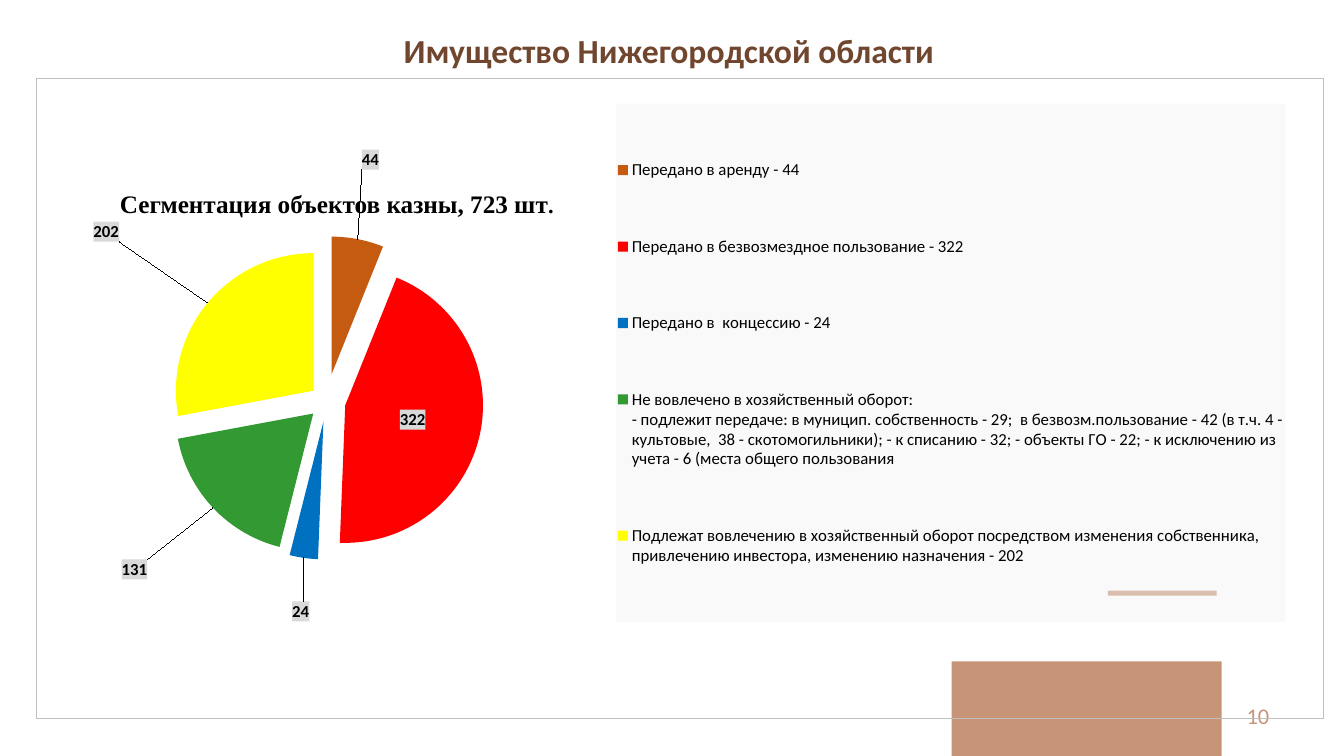
from dataclasses import dataclass
from typing import Optional

from lxml.etree import SubElement
from pptx import Presentation
from pptx.chart.chart import Chart
from pptx.chart.data import CategoryChartData
from pptx.dml.color import RGBColor as Rgb
from pptx.enum.chart import XL_CHART_TYPE as ChartType
from pptx.enum.chart import XL_LABEL_POSITION as LabelPos
from pptx.enum.chart import XL_LEGEND_POSITION as LegendPos
from pptx.enum.shapes import MSO_SHAPE as Preset
from pptx.enum.text import MSO_ANCHOR as Anchor
from pptx.enum.text import PP_ALIGN as Align
from pptx.oxml import parse_xml
from pptx.oxml.ns import nsdecls, qn
from pptx.slide import Slide
from pptx.util import Inches, Pt

SLIDE_WIDTH, SLIDE_HEIGHT = Inches(13.33), Inches(7.5)


@dataclass(frozen=True)
class Theme:
    accent: str = "C79478"
    title: str = "71462F"
    ink: str = "000000"
    frame: str = "BFBFBF"
    legend: str = "F2F2F2"
    label: str = "D9D9D9"
    body_font: str = "Calibri"
    caption_font: str = "Times New Roman"
    title_size: float = 24
    caption_size: float = 18
    number_size: float = 16
    chart_size: float = 12


THEME = Theme()


@dataclass(frozen=True)
class Box:
    """Place on the slide, in percent of its width and height."""
    left: float
    top: float
    width: float
    height: float

    def emu(self) -> tuple[int, int, int, int]:
        return (int(SLIDE_WIDTH * self.left / 100), int(SLIDE_HEIGHT * self.top / 100),
                int(SLIDE_WIDTH * self.width / 100), int(SLIDE_HEIGHT * self.height / 100))


@dataclass(frozen=True)
class Caption:
    box: Box
    runs: tuple[tuple[str, float], ...]
    font: str
    color: str
    bold: bool = True
    align: Align = Align.LEFT
    anchor: Anchor = Anchor.TOP
    line_spacing: float = 1.0


@dataclass(frozen=True)
class Segment:
    """Pie slice; label_shift is its label's offset in shares of the chart."""
    name: str
    count: int
    color: str
    explosion: int
    label_shift: Optional[tuple[float, float]] = None


ACCENT_BLOCKS = (Box(70.8, 87.47, 20.1, 12.53), Box(82.43, 78.13, 8.1, 0.67))
CHART_BOX = Box(2.7, 10.27, 95.85, 84.8)
PAGE_NUMBER = Caption(Box(72.68, 92, 22.5, 5.33), (("10", THEME.number_size),),
                      THEME.body_font, THEME.accent, False, Align.RIGHT, Anchor.MIDDLE)
CHART_CAPTION = Caption(Box(8.18, 24.27, 36, 5.33),
                        (("Сегментация объектов казны, 723 шт", THEME.caption_size),
                         (".", THEME.number_size)),
                        THEME.caption_font, THEME.ink)
HEADING = Caption(Box(3.52, 2.53, 92.48, 8.93),
                  (("Имущество Нижегородской области", THEME.title_size),),
                  THEME.body_font, THEME.title, True, Align.CENTER, Anchor.MIDDLE, 0.9)
SEGMENTS = (
    Segment("Передано в аренду - 44", 44, "C55A11", 20, (0.02, -0.23)),
    Segment("Передано в безвозмездное пользование - 322", 322, "FF0000", 14),
    Segment("Передано в  концессию - 24", 24, "0070C0", 15, (-0.01, 0.19)),
    Segment("Не вовлечено в хозяйственный оборот:\n"
            "- подлежит передаче: в муницип. собственность - 29;  в безвозм.пользование - 42 "
            "(в т.ч. 4 - культовые,  38 - скотомогильники); - к списанию - 32; "
            "- объекты ГО - 22; - к исключению из учета - 6 (места общего пользования",
            131, "339933", 13, (-0.1, 0.17)),
    Segment("Подлежат вовлечению в хозяйственный оборот посредством изменения собственника, "
            "привлечению инвестора, изменению назначения - 202",
            202, "FFFF00", 12, (-0.12, -0.18)),
)


def add_block(slide: Slide, box: Box) -> None:
    block = slide.shapes.add_shape(Preset.RECTANGLE, *box.emu())
    block.shadow.inherit = False
    block.fill.solid()
    block.fill.fore_color.rgb = Rgb.from_string(THEME.accent)
    block.line.fill.background()


def add_caption(slide: Slide, caption: Caption) -> None:
    frame = slide.shapes.add_textbox(*caption.box.emu()).text_frame
    frame.word_wrap = True
    frame.vertical_anchor = caption.anchor
    line = frame.paragraphs[0]
    line.alignment, line.line_spacing = caption.align, caption.line_spacing
    for text, size in caption.runs:
        run = line.add_run()
        run.text = text
        style = {"name": caption.font, "size": Pt(size), "bold": caption.bold}
        for key, value in style.items():
            setattr(run.font, key, value)
        run.font.color.rgb = Rgb.from_string(caption.color)


def layout_xml(**settings: object):
    """Manual chart layout holding the given settings in order."""
    layout = parse_xml(f"<c:layout {nsdecls('c')}><c:manualLayout/></c:layout>")
    for key, value in settings.items():
        SubElement(layout[0], qn(f"c:{key}")).set("val", str(value))
    return layout


def fill_xml(color: str, alpha: int = 100):
    return parse_xml(f'<c:spPr {nsdecls("c", "a")}><a:solidFill><a:srgbClr val="{color}">'
                     f'<a:alpha val="{alpha * 1000}"/></a:srgbClr></a:solidFill></c:spPr>')


def place_chart_parts(chart: Chart) -> None:
    """Set the frame line and the places of pie and legend."""
    root = chart.element.find(qn("c:chart"))
    root.addnext(parse_xml(
        f'<c:spPr {nsdecls("c", "a")}><a:noFill/><a:ln w="{Pt(0.75)}"><a:solidFill>'
        f'<a:srgbClr val="{THEME.frame}"/></a:solidFill></a:ln></c:spPr>'))
    area, legend = root.find(qn("c:plotArea")), root.find(qn("c:legend"))
    for owner in (area, legend):
        for old in owner.findall(qn("c:layout")):
            owner.remove(old)
    area.insert(0, layout_xml(layoutTarget="inner", xMode="edge", yMode="edge",
                              x=0, y=0.29, w=0.45, h=0.43))
    legend.find(qn("c:legendPos")).addnext(
        layout_xml(xMode="edge", yMode="edge", x=0.45, y=0.04, w=0.52, h=0.81))
    legend.find(qn("c:overlay")).addnext(fill_xml(THEME.legend, 44))


def add_pie(slide: Slide) -> None:
    data = CategoryChartData()
    data.categories = [segment.name for segment in SEGMENTS]
    data.add_series("Series 1", [segment.count for segment in SEGMENTS])
    chart = slide.shapes.add_chart(ChartType.PIE, *CHART_BOX.emu(), data).chart
    chart.has_title = False
    chart.has_legend = True
    legend_style = {"position": LegendPos.RIGHT, "include_in_layout": False}
    for key, value in legend_style.items():
        setattr(chart.legend, key, value)
    chart_style = {"name": THEME.body_font, "size": Pt(THEME.chart_size)}
    for key, value in chart_style.items():
        setattr(chart.font, key, value)
    chart.font.color.rgb = Rgb.from_string(THEME.ink)
    place_chart_parts(chart)

    pie = chart.plots[0]
    pie.vary_by_categories = True
    series = pie.series[0]
    for index, segment in enumerate(SEGMENTS):
        point = series.points[index]
        point.format.fill.solid()
        point.format.fill.fore_color.rgb = Rgb.from_string(segment.color)
        slice_xml = series._element.findall(qn("c:dPt"))[index]
        explosion = parse_xml(f'<c:explosion {nsdecls("c")} val="{segment.explosion}"/>')
        slice_xml.find(qn("c:spPr")).addprevious(explosion)
        label = point.data_label
        label.font.bold = True
        label.font.size = Pt(THEME.chart_size)
        label.position = LabelPos.CENTER
        label_xml = series._element.find(qn("c:dLbls")).findall(qn("c:dLbl"))[index]
        label_xml.find(qn("c:txPr")).addprevious(fill_xml(THEME.label))
        if segment.label_shift:
            x, y = segment.label_shift
            label_xml.insert(1, layout_xml(x=x, y=y))


def main() -> None:
    deck = Presentation()
    deck.slide_width, deck.slide_height = SLIDE_WIDTH, SLIDE_HEIGHT
    slide = deck.slides.add_slide(deck.slide_layouts[6])
    for block in ACCENT_BLOCKS:
        add_block(slide, block)
    add_caption(slide, PAGE_NUMBER)
    add_pie(slide)
    for caption in (CHART_CAPTION, HEADING):
        add_caption(slide, caption)
    deck.save("out.pptx")


if __name__ == "__main__":
    main()
